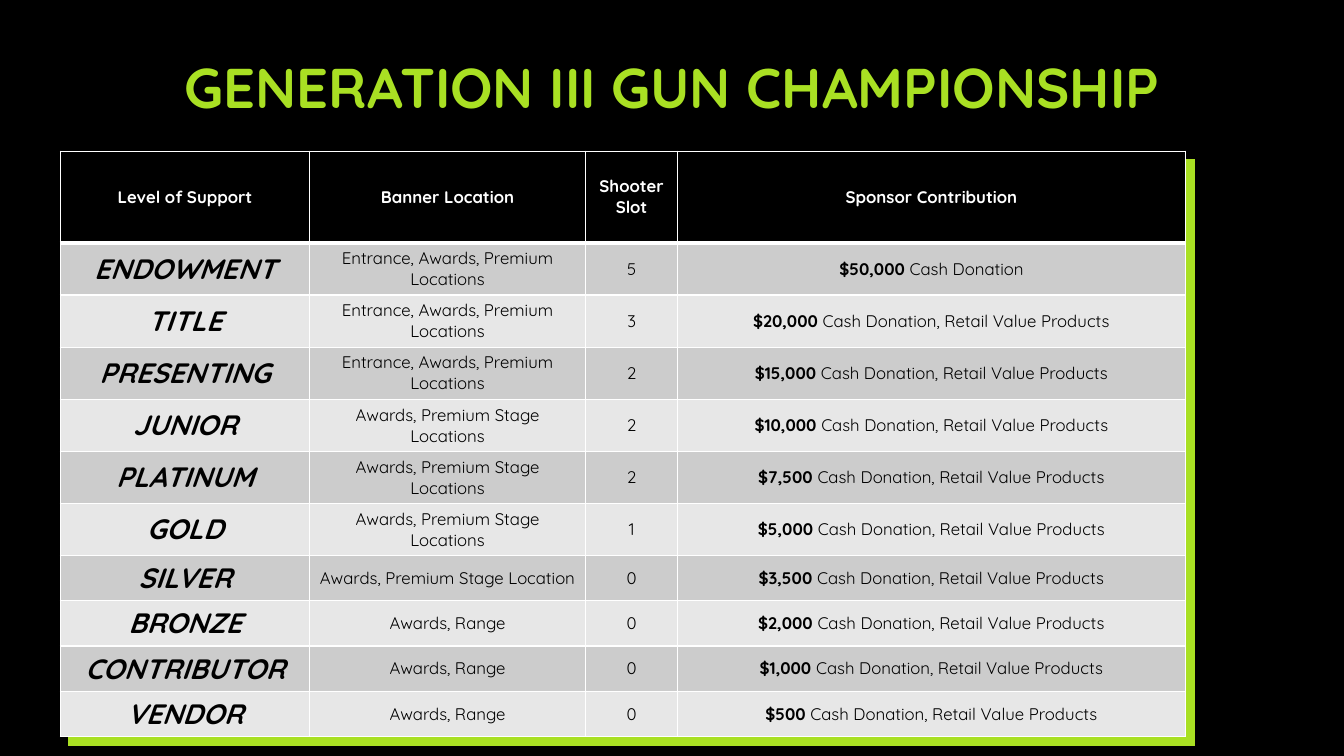
from lxml import etree
from pptx import Presentation
from pptx.dml.color import RGBColor
from pptx.enum.text import MSO_ANCHOR, PP_ALIGN
from pptx.oxml import parse_xml
from pptx.oxml.ns import nsdecls, qn
from pptx.util import Inches, Pt

MIDDLE = MSO_ANCHOR.MIDDLE
CENTER = PP_ALIGN.CENTER
BLACK = RGBColor(0x00, 0x00, 0x00)
WHITE = RGBColor(0xFF, 0xFF, 0xFF)
LIME = RGBColor(0xA9, 0xE0, 0x23)
DARK_BAND = RGBColor(0xCC, 0xCC, 0xCC)
LIGHT_BAND = RGBColor(0xE7, 0xE7, 0xE7)
FONT = "Quicksand"

HEADERS = ["Level of Support", "Banner Location", "Shooter Slot", "Sponsor Contribution"]
PREMIUM = "Entrance, Awards, Premium Locations"
STAGES = "Awards, Premium Stage Locations"
RANGE = "Awards, Range"
CASH = "Cash Donation"
CASH_AND_PRODUCTS = "Cash Donation, Retail Value Products"
LEVELS = [
    ("ENDOWMENT", PREMIUM, "5", "$50,000 ", CASH),
    ("TITLE", PREMIUM, "3", "$20,000 ", CASH_AND_PRODUCTS),
    ("PRESENTING", PREMIUM, "2", "$15,000 ", CASH_AND_PRODUCTS),
    ("JUNIOR", STAGES, "2", "$10,000 ", CASH_AND_PRODUCTS),
    ("PLATINUM", STAGES, "2", "$7,500 ", CASH_AND_PRODUCTS),
    ("GOLD", STAGES, "1", "$5,000 ", CASH_AND_PRODUCTS),
    ("SILVER", "Awards, Premium Stage Location", "0", "$3,500 ", CASH_AND_PRODUCTS),
    ("BRONZE", RANGE, "0", "$2,000 ", CASH_AND_PRODUCTS),
    ("CONTRIBUTOR", RANGE, "0", "$1,000 ", CASH_AND_PRODUCTS),
    ("VENDOR", RANGE, "0", "$500 ", CASH_AND_PRODUCTS),
]
COLUMN_WIDTHS = [2.47, 2.74, 0.91, 5.04]
ROW_HEIGHTS = [0.91, 0.5, 0.5, 0.5, 0.5, 0.44, 0.5, 0.44, 0.44, 0.44, 0.44]


def add_run(paragraph, text, size, color, bold=False, italic=False):
    """Append one formatted run to a paragraph."""
    run = paragraph.add_run()
    run.text = text
    run.font.name = FONT
    run.font.size = Pt(size)
    run.font.bold = bold
    run.font.italic = italic
    run.font.color.rgb = color


def add_title(slide, text):
    """Add the centred slide title."""
    box = slide.shapes.add_textbox(Inches(1.25), Inches(0.31), Inches(10.83), Inches(1.08))
    frame = box.text_frame
    frame.word_wrap = True
    frame.vertical_anchor = MIDDLE
    paragraph = frame.paragraphs[0]
    paragraph.alignment = CENTER
    add_run(paragraph, text, 40, LIME, bold=True)


def set_borders(cell, top, bottom):
    """Draw white borders round a cell, with top and bottom widths in points."""
    properties = cell._tc.get_or_add_tcPr()
    widths = {"lnL": 1, "lnR": 1, "lnT": top, "lnB": bottom}
    for position, (tag, width) in enumerate(widths.items()):
        line = etree.Element(qn(f"a:{tag}"), w=str(Pt(width)))
        fill = etree.SubElement(line, qn("a:solidFill"))
        etree.SubElement(fill, qn("a:srgbClr"), val=str(WHITE))
        properties.insert(position, line)


def fill_cell(cell, color, runs):
    """Fill a cell and write its centred runs."""
    cell.fill.solid()
    cell.fill.fore_color.rgb = color
    cell.vertical_anchor = MIDDLE
    paragraph = cell.text_frame.paragraphs[0]
    paragraph.alignment = CENTER
    for run in runs:
        add_run(paragraph, *run)


def add_table_shadow(table):
    """Give the table a hard lime shadow to the lower right."""
    effects = parse_xml(
        f'<a:effectLst {nsdecls("a")}><a:outerShdw blurRad="0" dist="{Inches(0.12)}" '
        f'dir="2700000" algn="tl" rotWithShape="0"><a:srgbClr val="{LIME}"/>'
        "</a:outerShdw></a:effectLst>"
    )
    table._tbl.tblPr.insert(0, effects)


def level_runs(level, banner, slots, amount, contribution):
    """Return the runs of the four cells of a support level."""
    return [
        [(level, 20, BLACK, True, True)],
        [(banner, 12, BLACK)],
        [(slots, 12, BLACK)],
        [(amount, 12, BLACK, True), (contribution, 12, BLACK)],
    ]


def add_sponsor_table(slide):
    """Add the table of sponsorship levels."""
    frame = slide.shapes.add_table(
        len(ROW_HEIGHTS), len(COLUMN_WIDTHS), Inches(0.6), Inches(1.5),
        Inches(sum(COLUMN_WIDTHS)), Inches(sum(ROW_HEIGHTS)),
    )
    table = frame.table
    add_table_shadow(table)
    for column, width in zip(table.columns, COLUMN_WIDTHS):
        column.width = Inches(width)
    contents = [[[(header, 12, WHITE, True)] for header in HEADERS]]
    contents += [level_runs(*level) for level in LEVELS]
    for index, (row, height) in enumerate(zip(table.rows, ROW_HEIGHTS)):
        row.height = Inches(height)
        band = DARK_BAND if index % 2 else LIGHT_BAND
        color = band if index else BLACK
        for cell, runs in zip(row.cells, contents[index]):
            fill_cell(cell, color, runs)
            set_borders(cell, 3 if index == 1 else 1, 3 if index == 0 else 1)


def main():
    """Build the sponsorship slide and save it."""
    presentation = Presentation()
    presentation.slide_width = Inches(13.33)
    presentation.slide_height = Inches(7.5)
    slide = presentation.slides.add_slide(presentation.slide_layouts[6])
    slide.background.fill.solid()
    slide.background.fill.fore_color.rgb = BLACK
    add_sponsor_table(slide)
    add_title(slide, "GENERATION III GUN CHAMPIONSHIP")
    presentation.save("out.pptx")


if __name__ == "__main__":
    main()
